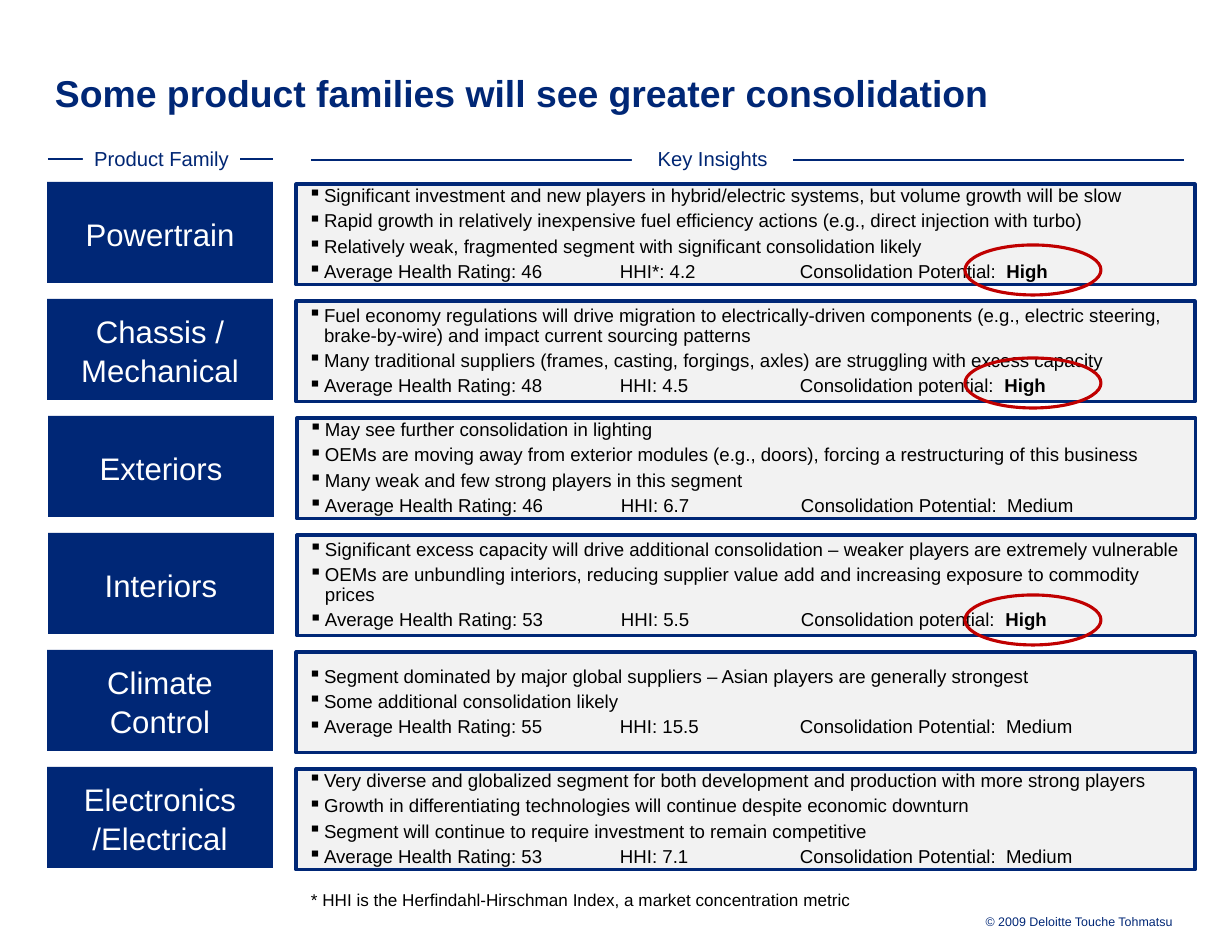
"""Build the product family consolidation slide."""
import pptx
import pptx.util
import pptx.dml.color
import pptx.enum.shapes
import pptx.enum.text
import pptx.oxml
import pptx.oxml.ns

PX = 914400 // 112
NAVY, INK, PALE, WHITE, RED = "002776", "002673", "F2F2F2", "FFFFFF", "C00000"
Pt = pptx.util.Pt
Kind = pptx.enum.shapes.MSO_SHAPE
Side = pptx.enum.text.PP_ALIGN
MID = pptx.enum.text.MSO_ANCHOR.MIDDLE
TOP = pptx.enum.text.MSO_ANCHOR.TOP


def tint(part, code):
    """Give a fill, or the fill of a line or font, a solid hex colour."""
    part.solid()
    part.fore_color.rgb = pptx.dml.color.RGBColor.from_string(code)


def put(kind, spot, text="", fill=None, edge=None, pad=(0, 0), anchor=MID,
        wrap=True, form=None, size=12, code="000000", bold=False, marks=False):
    """Add a text box (kind None) or a preset shape with its paragraphs."""
    area = [n * PX for n in spot]
    if kind is None:
        shape = slide.shapes.add_textbox(*area)
    else:
        shape = slide.shapes.add_shape(kind, *area)
        shape.shadow.inherit = False
        if fill:
            tint(shape.fill, fill)
        else:
            shape.fill.background()
        if edge:
            tint(shape.line.fill, edge)
            shape.line.width = Pt(2)
        else:
            shape.line.fill.background()
    if not text:
        return
    frame = shape.text_frame
    look = {"margin_left": pad[0] * PX, "margin_right": pad[0] * PX,
            "margin_top": pad[1] * PX, "margin_bottom": pad[1] * PX,
            "vertical_anchor": anchor, "word_wrap": wrap}
    for key, val in look.items():
        setattr(frame, key, val)
    for i, line in enumerate(text.split("\n")):
        para = frame.add_paragraph() if i else frame.paragraphs[0]
        if marks:
            props = para._p.get_or_add_pPr()
            props.set("marL", str(16 * PX))
            props.set("indent", str(-16 * PX))
            space = pptx.oxml.ns.nsdecls("a")
            props.append(pptx.oxml.parse_xml(f'<a:buChar {space} char="▪"/>'))
            if "\t" in line:
                stops = "".join(f'<a:tab pos="{n * PX}" algn="l"/>' for n in (312, 492))
                props.append(pptx.oxml.parse_xml(f"<a:tabLst {space}>{stops}</a:tabLst>"))
        for key, val in (form or {}).items():
            setattr(para, key, val)
        for j, words in enumerate(line.split("|")):
            run = para.add_run()
            run.text = words
            face = {"name": "Arial", "size": Pt(size), "bold": bold or j > 0}
            for key, val in face.items():
                setattr(run.font, key, val)
            tint(run.font.fill, code)


deck = pptx.Presentation()
deck.slide_width = 1232 * PX
deck.slide_height = 952 * PX
slide = deck.slides.add_slide(deck.slide_layouts[6])

put(None, (55, 48, 1135, 87), "Some product families will see greater consolidation",
    form={"line_spacing": 1.05}, size=24, code=NAVY, bold=True)

heads = [
    ("Product Family", 48, 273, 159, 1, (83, 148, 157, 24), False),
    ("Key Insights", 311, 1184, 160, 0.75, (632, 148, 161, 24), True),
]
for name, left, right, y, width, spot, wrap in heads:
    rule = slide.shapes.add_connector(pptx.enum.shapes.MSO_CONNECTOR.STRAIGHT,
                                      left * PX, y * PX, right * PX, y * PX)
    tint(rule.line.fill, NAVY)
    rule.line.width = Pt(width)
    rule._element.spPr.append(
        pptx.oxml.parse_xml(f'<a:effectLst {pptx.oxml.ns.nsdecls("a")}/>'))
    put(Kind.RECTANGLE, spot, name, fill=WHITE, pad=(10, 0), wrap=wrap, size=13,
        code=INK, form={"alignment": Side.CENTER, "line_spacing": 0.95})

rows = [
    ("Powertrain", 0, """\
Significant investment and new players in hybrid/electric systems, but volume growth will be slow
Rapid growth in relatively inexpensive fuel efficiency actions (e.g., direct injection with turbo)
Relatively weak, fragmented segment with significant consolidation likely
Average Health Rating: 46\tHHI*: 4.2\tConsolidation Potential:  |High"""),
    ("Chassis / Mechanical", 0, """\
Fuel economy regulations will drive migration to electrically-driven components (e.g., electric steering, brake-by-wire) and impact current sourcing patterns
Many traditional suppliers (frames, casting, forgings, axles) are struggling with excess capacity
Average Health Rating: 48\tHHI: 4.5\tConsolidation potential: | High"""),
    ("Exteriors", 1, """\
May see further consolidation in lighting
OEMs are moving away from exterior modules (e.g., doors), forcing a restructuring of this business
Many weak and few strong players in this segment
Average Health Rating: 46\tHHI: 6.7\tConsolidation Potential:  Medium"""),
    ("Interiors", 1, """\
Significant excess capacity will drive additional consolidation – weaker players are extremely vulnerable
OEMs are unbundling interiors, reducing supplier value add and increasing exposure to commodity prices
Average Health Rating: 53\tHHI: 5.5\tConsolidation potential:  |High"""),
    ("Climate Control", 0, """\
Segment dominated by major global suppliers – Asian players are generally strongest
Some additional consolidation likely
Average Health Rating: 55\tHHI: 15.5\tConsolidation Potential:  Medium"""),
    ("Electronics /Electrical", 0, """\
Very diverse and globalized segment for both development and production with more strong players
Growth in differentiating technologies will continue despite economic downturn
Segment will continue to require investment to remain competitive
Average Health Rating: 53\tHHI: 7.1\tConsolidation Potential:  Medium"""),
]
for i, (name, shift, notes) in enumerate(rows):
    y = 182 + 117 * i
    put(Kind.RECTANGLE, (47 + shift, y, 226, 101), name, fill=NAVY, pad=(10, 10),
        form={"alignment": Side.CENTER, "line_spacing": 1.06}, size=20, code=WHITE)
    put(Kind.RECTANGLE, (296 + shift, y + 2, 899, 101), notes, fill=PALE, edge=NAVY,
        pad=(12, 3), marks=True,
        form={"alignment": Side.LEFT, "line_spacing": 0.9, "space_after": Pt(3.3)})

for y in (245, 358, 595):
    put(Kind.OVAL, (965, y, 136, 50), edge=RED)

put(None, (291, 883, 580, 34),
    "* HHI is the Herfindahl-Hirschman Index, a market concentration metric",
    pad=(12, 6), anchor=TOP, form={"alignment": Side.CENTER}, size=11)
put(None, (862, 910, 311, 20), "© 2009 Deloitte Touche Tohmatsu", anchor=TOP,
    form={"alignment": Side.RIGHT, "line_spacing": Pt(12)}, size=8, code=NAVY)

deck.save("out.pptx")
